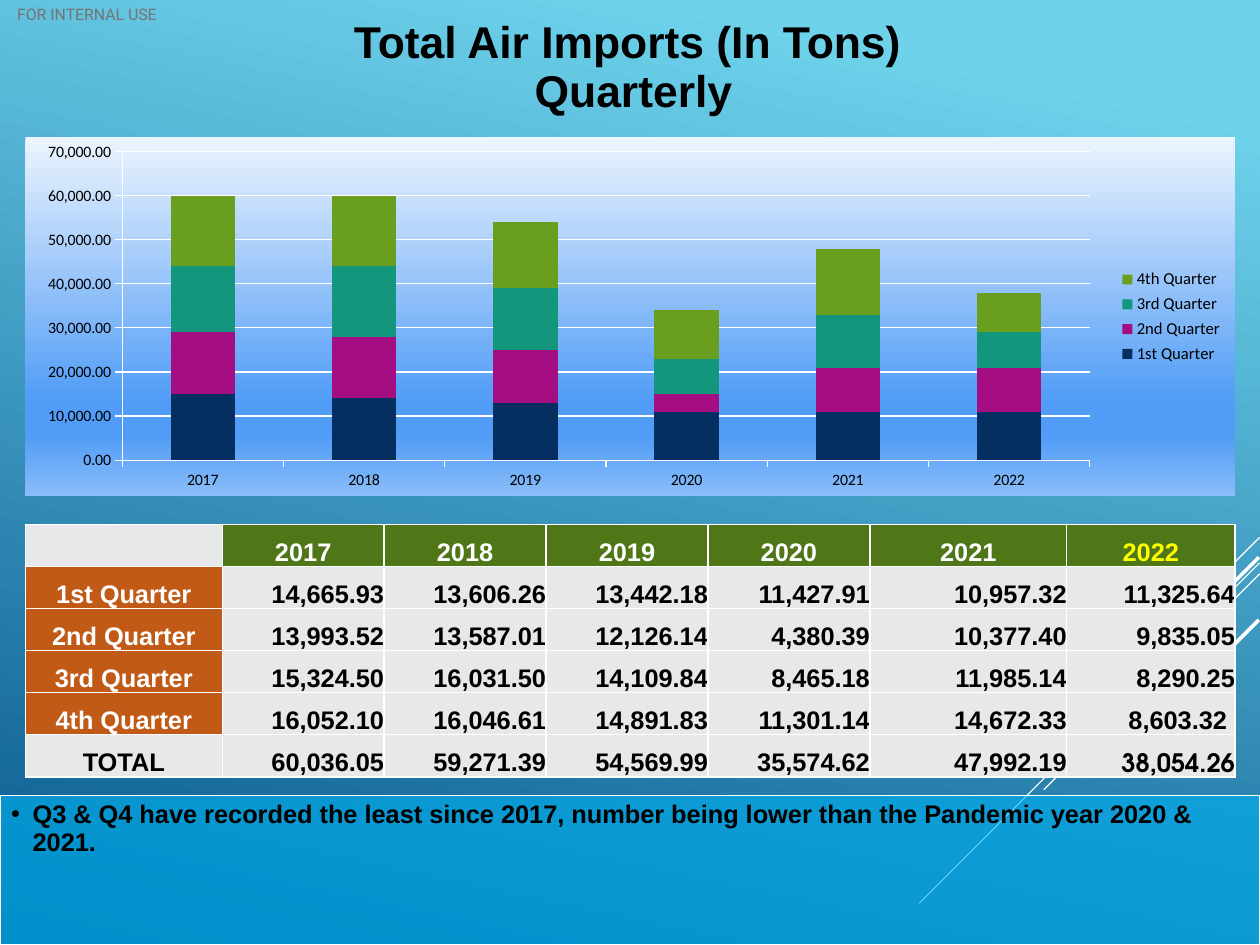
"""Build the quarterly air imports slide: stacked chart, table and remark."""
import dataclasses

import pptx
import pptx.chart.data
import pptx.dml.color
import pptx.enum.chart
import pptx.enum.shapes
import pptx.enum.text
import pptx.oxml
import pptx.oxml.ns
import pptx.util

Pt = pptx.util.Pt
qn = pptx.oxml.ns.qn
ALIGN = pptx.enum.text.PP_ALIGN
ANCHOR = pptx.enum.text.MSO_ANCHOR


@dataclasses.dataclass(frozen=True)
class Theme:
    black: str = "000000"
    white: str = "FFFFFF"
    grey: str = "747474"
    header: str = "4F7717"
    label: str = "C15A16"
    body: str = "E7E8EA"
    highlight: str = "FFFF00"
    panel: str = "00B0F0"
    quarters: tuple = ("052F61", "A50E82", "14967C", "6A9E1F")
    sky: tuple = ((10, "6ED2EB"), (100, "06588E"))
    chart_sky: tuple = ((0, "ECF4FE"), (74, "509CF6"), (83, "509CF6"), (100, "8BBDF9"))
    font: str = "Arial"
    chart_font: str = "Calibri"
    mark_font: str = "Roboto"
    total_font: str = "TeX Gyre Adventor"
    title_size: float = 28
    text_size: float = 16
    legend_size: float = 10.5
    small_size: float = 10
    line_spacing: float = 0.93


THEME = Theme()
WIDTH, HEIGHT = 793.7, 595.28
LEFT, INNER_WIDTH = 16, 762
YEARS = ("2017", "2018", "2019", "2020", "2021", "2022")
IMPORTS = {
    "1st Quarter": (14665.93, 13606.26, 13442.18, 11427.91, 10957.32, 11325.64),
    "2nd Quarter": (13993.52, 13587.01, 12126.14, 4380.39, 10377.40, 9835.05),
    "3rd Quarter": (15324.50, 16031.50, 14109.84, 8465.18, 11985.14, 8290.25),
    "4th Quarter": (16052.10, 16046.61, 14891.83, 11301.14, 14672.33, 8603.32),
}
TOTALS = (60036.05, 59271.39, 54569.99, 35574.62, 47992.19, 38054.26)
COLUMN_WIDTHS = (124, 102, 102, 102, 102, 124, 106)
STREAKS = (
    (793.5, 338.5, 728, 404, 0.75),
    (793.5, 354.5, 579, 569, 0.75),
    (793.5, 361.5, 657.5, 497.5, 0.75),
    (793, 351, 668, 476, 2.25),
    (793, 390.5, 702, 481.5, 2.25),
)


def rgb(color):
    return pptx.dml.color.RGBColor.from_string(color)


def xml(tag, content="", attributes=""):
    prefix = tag.split(":")[0]
    spaces = pptx.oxml.ns.nsdecls(*dict.fromkeys((prefix, "a")))
    return pptx.oxml.parse_xml(f"<{tag} {spaces} {attributes}>{content}</{tag}>")


def gradient(stops, angle):
    marks = "".join(
        f'<a:gs pos="{position * 1000}"><a:srgbClr val="{color}"/></a:gs>'
        for position, color in stops
    )
    content = f'<a:gsLst>{marks}</a:gsLst><a:lin ang="{angle * 60000}" scaled="0"/>'
    return xml("a:gradFill", content, 'rotWithShape="1"')


def style_font(font, size, color, name, bold=False):
    font.size, font.name, font.bold = Pt(size), name, bold
    font.color.rgb = rgb(color)


def write(paragraph, text, size, color, align=ALIGN.LEFT, name=THEME.font, bold=True):
    paragraph.alignment = align
    paragraph.line_spacing = THEME.line_spacing
    run = paragraph.add_run()
    run.text = text
    style_font(run.font, size, color, name, bold)


def paint_background(slide):
    slide.background.fill.solid()
    properties = slide.element.find(".//" + qn("p:bgPr"))
    properties.replace(properties[0], gradient(THEME.sky, 102))


def add_streak(slide, x1, y1, x2, y2, weight):
    streak = slide.shapes.add_connector(
        pptx.enum.shapes.MSO_CONNECTOR.STRAIGHT, Pt(x1), Pt(y1), Pt(x2), Pt(y2))
    streak.line.color.rgb = rgb(THEME.white)
    streak.line.width = Pt(weight)
    streak.element.spPr.append(xml("a:effectLst"))


def add_heading(slide, box, lines, **style):
    frame = slide.shapes.add_textbox(*map(Pt, box)).text_frame
    frame.word_wrap = True
    frame.vertical_anchor = ANCHOR.MIDDLE
    frame.margin_left = frame.margin_right = frame.margin_top = frame.margin_bottom = 0
    for index, line in enumerate(lines):
        paragraph = frame.add_paragraph() if index else frame.paragraphs[0]
        write(paragraph, line, align=ALIGN.CENTER, **style)


def add_remark(slide, text):
    panel = slide.shapes.add_shape(
        pptx.enum.shapes.MSO_SHAPE.RECTANGLE, 0, Pt(501), Pt(WIDTH), Pt(HEIGHT - 501))
    panel.shadow.inherit = False
    panel.fill.solid()
    panel.fill.fore_color.rgb = rgb(THEME.panel)
    tint = panel.element.spPr.find(qn("a:solidFill"))[0]
    tint.append(xml("a:alpha", attributes='val="63000"'))
    panel.line.color.rgb = rgb(THEME.white)
    panel.line.width = Pt(0.75)
    panel.text_frame.word_wrap = True
    panel.text_frame.vertical_anchor = ANCHOR.TOP
    paragraph = panel.text_frame.paragraphs[0]
    write(paragraph, text, THEME.text_size, THEME.black)
    indents = paragraph._p.get_or_add_pPr()
    indents.set("marL", str(Pt(13.5)))
    indents.set("indent", str(-Pt(13.5)))
    indents.append(xml("a:buClr", f'<a:srgbClr val="{THEME.black}"/>'))
    indents.append(xml("a:buFont", attributes='typeface="Arial"'))
    indents.append(xml("a:buChar", attributes='char="•"'))


def fill_cell(cell, text, fill, color, align, name=THEME.font, inset=0):
    cell.margin_left = cell.margin_top = cell.margin_bottom = 0
    cell.margin_right = Pt(inset)
    cell.vertical_anchor = ANCHOR.BOTTOM
    cell.fill.solid()
    cell.fill.fore_color.rgb = rgb(fill)
    edge = f'<a:solidFill><a:srgbClr val="{THEME.white}"/></a:solidFill>'
    for index, side in enumerate("LRTB"):
        cell._tc.tcPr.insert(index, xml(f"a:ln{side}", edge, f'w="{Pt(1)}"'))
    if text:
        write(cell.text_frame.paragraphs[0], text, THEME.text_size, color, align, name)


def add_import_table(slide):
    rows = {**IMPORTS, "TOTAL": TOTALS}
    table = slide.shapes.add_table(
        len(rows) + 1, len(YEARS) + 1, Pt(LEFT), Pt(330.5), Pt(INNER_WIDTH), Pt(159)).table
    for column, width in zip(table.columns, COLUMN_WIDTHS):
        column.width = Pt(width)
    for row in table.rows:
        row.height = Pt(26.5)
    fill_cell(table.cell(0, 0), "", THEME.body, THEME.black, ALIGN.CENTER)
    for c, year in enumerate(YEARS, 1):
        color = THEME.highlight if year == "2022" else THEME.white
        fill_cell(table.cell(0, c), year, THEME.header, color, ALIGN.CENTER)
    for r, (label, tons) in enumerate(rows.items(), 1):
        fill, color = (THEME.label, THEME.white) if label in IMPORTS else (THEME.body, THEME.black)
        fill_cell(table.cell(r, 0), label, fill, color, ALIGN.CENTER)
        for c, (year, value) in enumerate(zip(YEARS, tons), 1):
            name = THEME.total_font if (label, year) == ("TOTAL", "2022") else THEME.font
            inset = 5 if (label, year) == ("4th Quarter", "2022") else 0
            fill_cell(table.cell(r, c), f"{value:,.2f}", THEME.body, THEME.black,
                      ALIGN.RIGHT, name, inset)


def add_import_chart(slide):
    data = pptx.chart.data.CategoryChartData(number_format="#,##0.00")
    data.categories = YEARS
    for quarter, tons in IMPORTS.items():
        data.add_series(quarter, [round(value, -3) for value in tons])
    chart = slide.shapes.add_chart(
        pptx.enum.chart.XL_CHART_TYPE.COLUMN_STACKED,
        Pt(LEFT), Pt(86.5), Pt(INNER_WIDTH), Pt(226), data).chart
    style_font(chart.font, THEME.small_size, THEME.black, THEME.chart_font)
    chart.has_title = False
    chart.has_legend = True
    chart.legend.position = pptx.enum.chart.XL_LEGEND_POSITION.RIGHT
    chart.legend.include_in_layout = False
    style_font(chart.legend.font, THEME.legend_size, THEME.black, THEME.chart_font)
    bars = chart.plots[0]
    bars.gap_width, bars.overlap, bars.vary_by_categories = 150, 100, False
    for series, color in zip(bars.series, THEME.quarters):
        series.format.fill.solid()
        series.format.fill.fore_color.rgb = rgb(color)
    tons_axis = chart.value_axis
    tons_axis.minimum_scale, tons_axis.maximum_scale, tons_axis.major_unit = 0, 70000, 10000
    tons_axis.tick_labels.number_format = "#,##0.00"
    tons_axis.tick_labels.number_format_is_linked = False
    for ruled in (tons_axis, chart.category_axis, tons_axis.major_gridlines):
        ruled.format.line.color.rgb = rgb(THEME.white)
        ruled.format.line.width = Pt(0.75)
    place_plot(chart)


def place_plot(chart):
    area = chart.element.find(".//" + qn("c:plotArea"))
    for layout in area.findall(qn("c:layout")):
        area.remove(layout)
    extents = "".join(f'<c:{key} val="{value}"/>' for key, value in (
        ("layoutTarget", "inner"), ("xMode", "edge"), ("yMode", "edge"),
        ("x", 0.08), ("y", 0.04), ("w", 0.8), ("h", 0.86)))
    area.insert(0, xml("c:layout", f"<c:manualLayout>{extents}</c:manualLayout>"))
    area.append(xml("c:spPr", "<a:noFill/>"))
    backdrop = xml("c:spPr", "<a:ln><a:noFill/></a:ln>")
    backdrop.insert(0, gradient(THEME.chart_sky, 90))
    chart.element.find(qn("c:chart")).addnext(backdrop)


def main():
    deck = pptx.Presentation()
    deck.slide_width, deck.slide_height = Pt(WIDTH), Pt(HEIGHT)
    slide = deck.slides.add_slide(deck.slide_layouts[6])
    paint_background(slide)
    for streak in STREAKS:
        add_streak(slide, *streak)
    add_heading(slide, (0, 0, 109.5, 18.5), ["FOR INTERNAL USE"], size=THEME.small_size,
                color=THEME.grey, name=THEME.mark_font, bold=False)
    add_heading(slide, (42, 19, 714, 48), ["Total Air Imports (In Tons) ", "Quarterly"],
                size=THEME.title_size, color=THEME.black)
    add_remark(slide, "Q3 & Q4 have recorded the least since 2017, number being lower "
                      "than the Pandemic year 2020 & 2021.")
    add_import_table(slide)
    add_import_chart(slide)
    deck.save("out.pptx")


if __name__ == "__main__":
    main()
